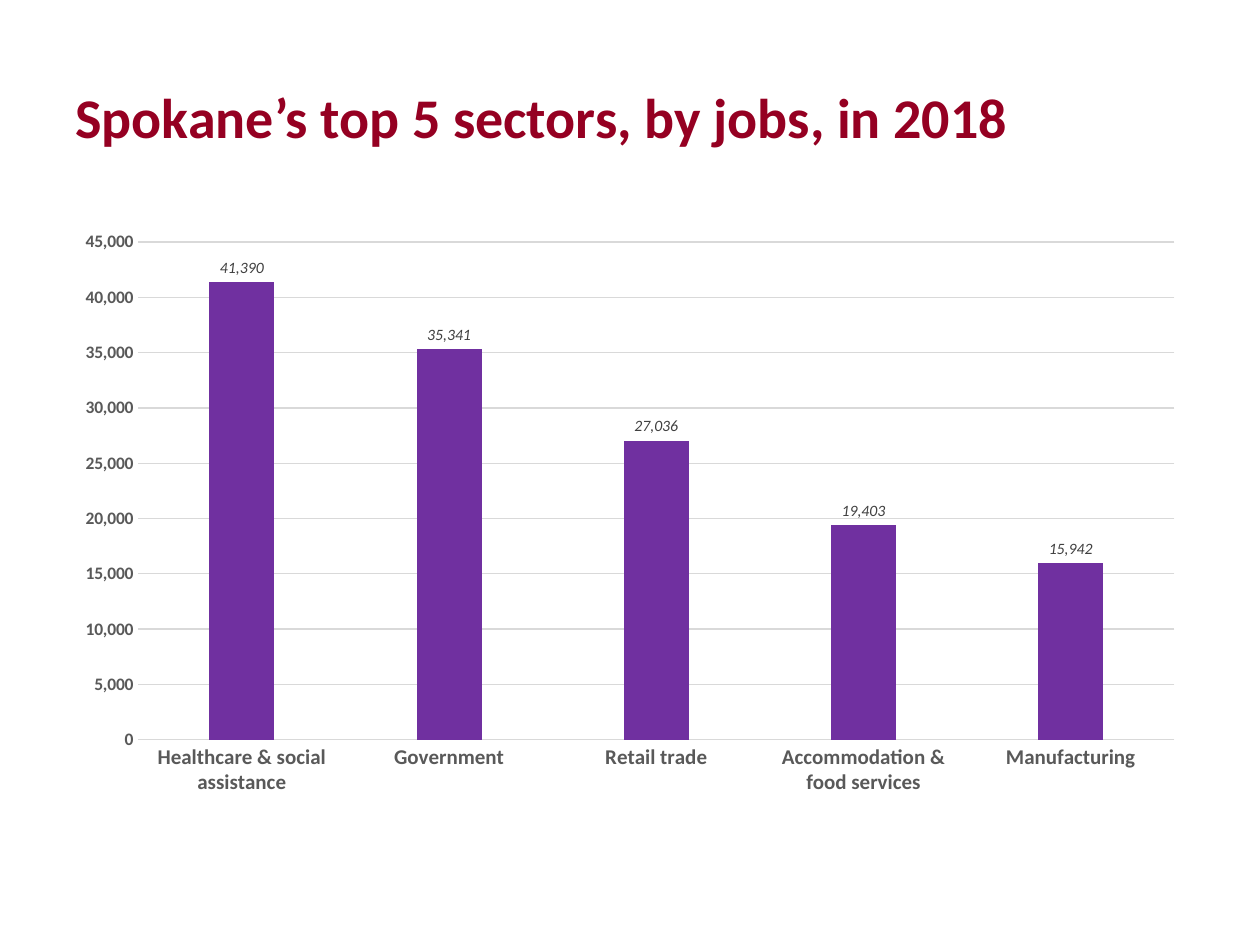
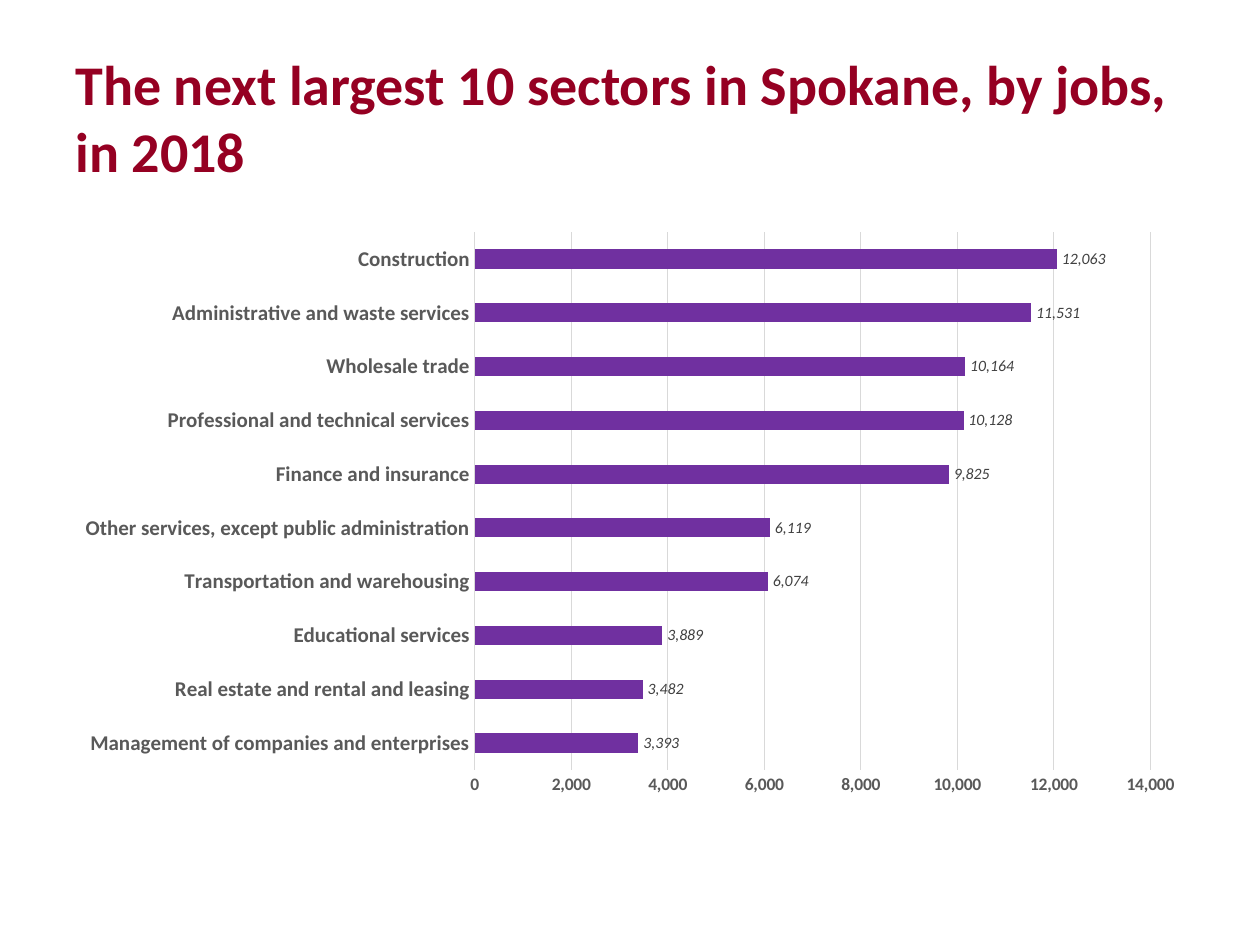
from pptx import Presentation
from pptx.chart.data import CategoryChartData
from pptx.dml.color import RGBColor
from pptx.enum.chart import XL_CHART_TYPE, XL_LABEL_POSITION, XL_TICK_MARK
from pptx.enum.text import MSO_ANCHOR
from pptx.util import Inches, Pt

COLUMNS = XL_CHART_TYPE.COLUMN_CLUSTERED
BARS = XL_CHART_TYPE.BAR_CLUSTERED
OUTSIDE_END = XL_LABEL_POSITION.OUTSIDE_END
NO_TICK = XL_TICK_MARK.NONE
MIDDLE = MSO_ANCHOR.MIDDLE

CRIMSON = RGBColor(0x95, 0x00, 0x22)
PURPLE = RGBColor(0x70, 0x30, 0xA0)
BLACK = RGBColor(0x00, 0x00, 0x00)
LABEL_GREY = RGBColor(0x40, 0x40, 0x40)
AXIS_GREY = RGBColor(0x59, 0x59, 0x59)
GRID_GREY = RGBColor(0xD9, 0xD9, 0xD9)

FONT = "Calibri"
NUMBER_FORMAT = "#,##0"
WIDTH, HEIGHT = Inches(10), Inches(7.5)
TITLE_AREA = (0.05, 0.04, 0.9, 1 / 6)
CHART_AREA = (0.05, 7 / 30, 0.9, 0.62)

TOP_SECTORS = {
    "Healthcare & social assistance": 41390,
    "Government": 35341,
    "Retail trade": 27036,
    "Accommodation & food services": 19403,
    "Manufacturing": 15942,
}
NEXT_SECTORS = {
    "Management of companies and enterprises": 3393,
    "Real estate and rental and leasing": 3482,
    "Educational services": 3889,
    "Transportation and warehousing": 6074,
    "Other services, except public administration": 6119,
    "Finance and insurance": 9825,
    "Professional and technical services": 10128,
    "Wholesale trade": 10164,
    "Administrative and waste services": 11531,
    "Construction": 12063,
}


def place(area):
    left, top, width, height = area
    return (round(left * WIDTH), round(top * HEIGHT),
            round(width * WIDTH), round(height * HEIGHT))


def style_font(font, size, color, bold=False, italic=False):
    font.name = FONT
    font.size = Pt(size)
    font.color.rgb = color
    font.bold = bold
    font.italic = italic


def style_line(line, color):
    line.color.rgb = color
    line.width = Pt(0.75)


def add_text(slide, area, text, anchor=MIDDLE, **font_format):
    tf = slide.shapes.add_textbox(*place(area)).text_frame
    tf.word_wrap = True
    tf.vertical_anchor = anchor
    r = tf.paragraphs[0].add_run()
    r.text = text
    style_font(r.font, **font_format)


def style_axis(axis, size):
    axis.major_tick_mark = NO_TICK
    axis.minor_tick_mark = NO_TICK
    style_font(axis.tick_labels.font, size, AXIS_GREY, bold=True)


def add_labels(plot):
    plot.has_data_labels = True
    labels = plot.data_labels
    labels.show_value = True
    labels.position = OUTSIDE_END
    labels.number_format = NUMBER_FORMAT
    labels.number_format_is_linked = False
    style_font(labels.font, 9, LABEL_GREY, italic=True)


def add_sector_chart(slide, kind, sectors, top, step, gap, overlap):
    data = CategoryChartData(number_format=NUMBER_FORMAT)
    data.categories = sectors.keys()
    data.add_series("Series 1", sectors.values())
    chart = slide.shapes.add_chart(kind, *place(CHART_AREA), data).chart
    chart.has_legend = False
    chart.has_title = False
    style_font(chart.font, 10, BLACK)

    style_axis(chart.category_axis, 12)
    style_line(chart.category_axis.format.line, GRID_GREY)
    values = chart.value_axis
    style_axis(values, 10)
    values.format.line.fill.background()
    values.minimum_scale, values.maximum_scale, values.major_unit = 0, top, step
    values.has_major_gridlines = True
    style_line(values.major_gridlines.format.line, GRID_GREY)
    values.tick_labels.number_format = NUMBER_FORMAT
    values.tick_labels.number_format_is_linked = False

    plot = chart.plots[0]
    plot.vary_by_categories = False
    plot.gap_width = gap
    plot.overlap = overlap
    add_labels(plot)
    fill = plot.series[0].format.fill
    fill.solid()
    fill.fore_color.rgb = PURPLE


def add_sector_slide(prs, title, kind, sectors, **chart_format):
    s = prs.slides.add_slide(prs.slide_layouts[6])
    add_text(s, TITLE_AREA, title, size=32, color=CRIMSON, bold=True)
    add_sector_chart(s, kind, sectors, **chart_format)


def main():
    prs = Presentation()
    prs.slide_width, prs.slide_height = WIDTH, HEIGHT
    add_sector_slide(prs, "Spokane’s top 5 sectors, by jobs, in 2018",
                     COLUMNS, TOP_SECTORS,
                     top=45000, step=5000, gap=219, overlap=-27)
    add_sector_slide(prs, "The next largest 10 sectors in Spokane, by jobs, in 2018",
                     BARS, NEXT_SECTORS,
                     top=14000, step=2000, gap=182, overlap=0)
    prs.save("out.pptx")


if __name__ == "__main__":
    main()
